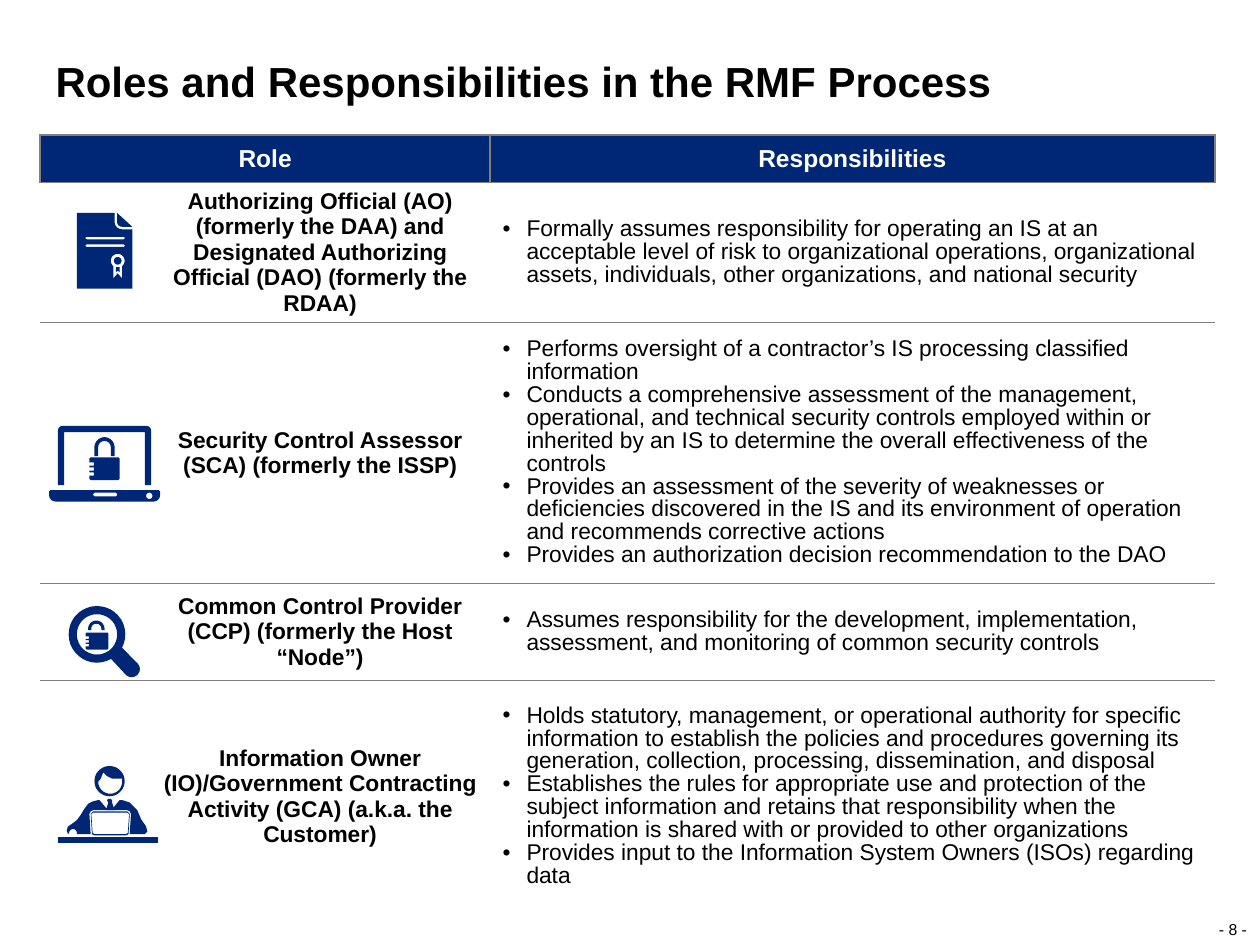
"""Build the slide on roles and responsibilities in the RMF process."""
from dataclasses import dataclass
from math import cos, radians, sin
from typing import NamedTuple

from lxml.etree import SubElement
from pptx import Presentation
from pptx.dml.color import RGBColor
from pptx.enum.text import MSO_ANCHOR, PP_ALIGN
from pptx.oxml import parse_xml
from pptx.oxml.ns import nsdecls, qn
from pptx.util import Cm, Pt

COLORS = {"navy": "002776", "white": "FFFFFF", "black": "000000", "rule": "808080"}
FONT = "Arial"
PLAIN_TABLE_STYLE = "{2D5ABB26-0587-4C30-8999-92F81FD0307C}"
ICON_UNIT = Cm(0.0254)
PRECISION = 10
Outline = list[tuple[float, float]]


@dataclass(frozen=True)
class TextStyle:
    size: float
    color: str = "black"
    bold: bool = False
    align: PP_ALIGN = PP_ALIGN.LEFT
    spacing: float = 1.0
    bullet: bool = False


class Role(NamedTuple):
    title: str
    duties: list[str]
    height: float
    filled: bool


class Icon(NamedTuple):
    pieces: list[list[Outline]]


class Label(NamedTuple):
    text: str
    box: tuple[float, float, float, float]
    style: TextStyle
    wrap: bool


HEADER = TextStyle(14, "white", True, PP_ALIGN.CENTER)
ROLE_NAME = TextStyle(13, bold=True, align=PP_ALIGN.CENTER)
DUTY = TextStyle(13, spacing=0.9, bullet=True)
LABELS = [
    Label("- 8 -", (24.46, 18.52, 0.79, 0.41), TextStyle(9, align=PP_ALIGN.CENTER, spacing=1.06), False),
    Label("Roles and Responsibilities in the RMF Process", (1.12, 1.24, 23.19, 0.91),
          TextStyle(24, bold=True, spacing=0.9), True),
]
COLUMN_WIDTHS = [2.21, 6.86, 14.61]
HEADER_HEIGHT = 0.96
ROLES = [
    Role("Authorizing Official (AO) (formerly the DAA) and Designated Authorizing Official (DAO) (formerly the RDAA)",
         ["Formally assumes responsibility for operating an IS at an acceptable level of risk to organizational "
          "operations, organizational assets, individuals, other organizations, and national security"], 2.82, True),
    Role("Security Control Assessor (SCA) (formerly the ISSP)",
         ["Performs oversight of a contractor’s IS processing classified information",
          "Conducts a comprehensive assessment of the management, operational, and technical security controls "
          "employed within or inherited by an IS to determine the overall effectiveness of the controls",
          "Provides an assessment of the severity of weaknesses or deficiencies discovered in the IS and its "
          "environment of operation and recommends corrective actions",
          "Provides an authorization decision recommendation to the DAO"], 5.26, True),
    Role("Common Control Provider (CCP) (formerly the Host “Node”)",
         ["Assumes responsibility for the development, implementation, assessment, and monitoring of common "
          "security controls"], 1.96, False),
    Role("Information Owner (IO)/Government Contracting Activity (GCA) (a.k.a. the Customer)",
         ["Holds statutory, management, or operational authority for specific information to establish the policies "
          "and procedures governing its generation, collection, processing, dissemination, and disposal",
          "Establishes the rules for appropriate use and protection of the subject information and retains that "
          "responsibility when the information is shared with or provided to other organizations",
          "Provides input to the Information System Owners (ISOs) regarding data"], 4.67, False),
]


def arc(x: float, y: float, radius: float, start: float = 0, end: float = 360) -> Outline:
    steps = max(4, round(abs(end - start) / 10))
    angles = [radians(start + (end - start) * step / steps) for step in range(steps + 1)]
    return [(x + radius * cos(angle), y + radius * sin(angle)) for angle in angles]


def pill(left: float, top: float, right: float, bottom: float) -> Outline:
    radius, middle = (bottom - top) / 2, (top + bottom) / 2
    return arc(right - radius, middle, radius, -90, 90) + arc(left + radius, middle, radius, 90, 270)


def lock_body(left: float, top: float, scale: float) -> Outline:
    right, bottom = left + 24 * scale, top + 18 * scale
    outline = [(left, bottom - scale), (left + scale, bottom), (right - scale, bottom), (right, bottom - scale),
               (right, top + scale), (right - scale, top), (left + scale, top), (left, top + scale)]
    for offset in (4, 8, 12):
        upper, lower, inner = top + offset * scale, top + (offset + 2.6) * scale, left + 3.5 * scale
        outline += [(left, upper), (inner, upper), (inner, lower), (left, lower)]
    return outline


def shackle(x: float, y: float, outer: float, inner: float, bottom: float) -> Outline:
    return ([(x - outer, bottom)] + arc(x, y, outer, 180, 360) + [(x + outer, bottom), (x + inner, bottom)]
            + arc(x, y, inner, 360, 180) + [(x - inner, bottom)])


CERTIFICATE = Icon([[
    [(61, 169), (91, 169)] + arc(97, 176, 6, 180, 90) + [(105, 182), (105, 229), (61, 229)],
    [(93, 169), (105, 180)] + arc(97, 176, 4, 90, 180),
    pill(68, 188, 99, 190), pill(68, 194, 99, 196),
    [(97, 211), (97, 221), (93.5, 217), (90, 221), (90, 211)] + arc(93.5, 207, 5.5, 135, 405),
    arc(93.5, 207, 3),
    [(92, 212), (92, 216), (93.5, 215), (95, 216), (95, 212)],
]])
LAPTOP = Icon([
    [[(51, 385), (51, 343), (115, 343), (115, 385), (120, 385)] + arc(116, 342, 4, 0, -90)
     + arc(50, 342, 4, -90, -180) + [(46, 385)]],
    [[(40, 389), (126, 389), (127, 390)] + arc(122, 393, 5, 0, 90) + arc(44, 393, 5, 90, 180) + [(39, 390)],
     pill(74, 391, 93, 394), arc(118.5, 393.5, 2.5)],
    [lock_body(71, 363, 1), shackle(83, 355, 8, 5, 362)],
])
MAGNIFIER = Icon([
    [arc(77, 503.5, 22.5, 60, 388) + arc(104.5, 531, 6.5, -45, 135), arc(77, 503.5, 16)],
    [lock_body(68, 502, 0.75)],
    [shackle(76.5, 499, 6.5, 4, 500)],
])
PERSON = Icon([
    [[(46, 664), (125, 664), (125, 669), (46, 669)]],
    [[(61, 662)] + arc(58, 661, 3, 0, -180)
     + [(54, 662), (53, 659), (54, 656), (57, 654), (61, 651), (64, 647), (67, 642), (70, 638), (74, 636),
        (78, 635), (79, 635), (84, 641), (87, 643), (90, 641), (95, 635), (97, 635), (103, 637), (109, 643),
        (112, 650), (116, 656), (117, 660), (115, 662), (103, 662), (104, 646), (103, 644), (101, 643),
        (74, 643), (72, 644), (71, 646), (72, 662)]],
    [[(75, 663), (73, 662), (72, 646), (74, 644), (101, 644), (103, 646), (102, 662), (100, 663)],
     [(75, 662), (73.5, 661), (72.5, 646), (74, 645), (101, 645), (102.5, 646), (101.5, 661), (100, 662)]],
    [[(84, 643), (91, 643), (89, 637), (89, 635), (88, 634), (86, 634), (85, 635), (86, 637)]],
    [arc(87, 620, 12),
     arc(87.5, 620.5, 9.5, 0, 180) + [(80, 618), (82, 613), (85, 616), (89, 618), (94, 618), (97, 618)]],
])


def write_paragraphs(text_frame, texts: list[str], style: TextStyle) -> None:
    for index, text in enumerate(texts):
        paragraph = text_frame.paragraphs[0] if index == 0 else text_frame.add_paragraph()
        if style.bullet:
            properties = paragraph._p.get_or_add_pPr()
            properties.set("marL", str(Cm(0.48)))
            properties.set("indent", str(-Cm(0.48)))
            SubElement(properties, qn("a:buFont")).set("typeface", FONT)
            SubElement(properties, qn("a:buChar")).set("char", "•")
        paragraph.alignment, paragraph.line_spacing = style.align, style.spacing
        run = paragraph.add_run()
        run.text = text
        run.font.name, run.font.size, run.font.bold = FONT, Pt(style.size), style.bold
        run.font.color.rgb = RGBColor.from_string(COLORS[style.color])


def format_cell(cell, fill: str | None, sides: str) -> None:
    cell.vertical_anchor = MSO_ANCHOR.MIDDLE
    cell.margin_top = cell.margin_bottom = 0
    if fill:
        cell.fill.solid()
        cell.fill.fore_color.rgb = RGBColor.from_string(COLORS[fill])
    else:
        cell.fill.background()
    for index, side in enumerate(sides):
        border = parse_xml(f'<a:ln{side} {nsdecls("a")} w="{Pt(1)}"><a:solidFill>'
                           f'<a:srgbClr val="{COLORS["rule"]}"/></a:solidFill></a:ln{side}>')
        cell._tc.get_or_add_tcPr().insert(index, border)


def draw_label(slide, label: Label) -> None:
    text_frame = slide.shapes.add_textbox(*map(Cm, label.box)).text_frame
    text_frame.margin_left = text_frame.margin_right = text_frame.margin_top = text_frame.margin_bottom = 0
    text_frame.word_wrap, text_frame.vertical_anchor = label.wrap, MSO_ANCHOR.BOTTOM
    write_paragraphs(text_frame, [label.text], label.style)


def draw_table(slide) -> None:
    heights = [HEADER_HEIGHT] + [role.height for role in ROLES]
    table = slide.shapes.add_table(len(heights), len(COLUMN_WIDTHS), Cm(0.81), Cm(2.72),
                                   Cm(sum(COLUMN_WIDTHS)), Cm(sum(heights))).table
    table.horz_banding = False
    table._tbl.tblPr.find(qn("a:tableStyleId")).text = PLAIN_TABLE_STYLE
    for column, width in zip(table.columns, COLUMN_WIDTHS):
        column.width = Cm(width)
    for row, height in zip(table.rows, heights):
        row.height = Cm(height)
    for cell in table.rows[0].cells:
        format_cell(cell, "navy", "LRTB")
    table.cell(0, 0).merge(table.cell(0, 1))
    write_paragraphs(table.cell(0, 0).text_frame, ["Role"], HEADER)
    write_paragraphs(table.cell(0, 2).text_frame, ["Responsibilities"], HEADER)
    for index, role in enumerate(ROLES, 1):
        for cell in table.rows[index].cells:
            format_cell(cell, "white" if role.filled else None, "TB" if index < len(ROLES) else "T")
        write_paragraphs(table.cell(index, 1).text_frame, [role.title], ROLE_NAME)
        write_paragraphs(table.cell(index, 2).text_frame, role.duties, DUTY)


def draw_icon(slide, icon: Icon) -> None:
    shapes = slide.shapes if len(icon.pieces) == 1 else slide.shapes.add_group_shape().shapes
    for piece in icon.pieces:
        outlines = [[(x * PRECISION, y * PRECISION) for x, y in outline] for outline in piece]
        builder = shapes.build_freeform(*outlines[0][0], scale=ICON_UNIT / PRECISION)
        builder.add_line_segments(outlines[0][1:])
        for outline in outlines[1:]:
            builder.move_to(*outline[0])
            builder.add_line_segments(outline[1:])
        shape = builder.convert_to_shape()
        shape.shadow.inherit = False
        shape.fill.solid()
        shape.fill.fore_color.rgb = RGBColor.from_string(COLORS["navy"])
        shape.line.fill.background()


def main() -> None:
    presentation = Presentation()
    presentation.slide_width, presentation.slide_height = Cm(25.4), Cm(19.05)
    slide = presentation.slides.add_slide(presentation.slide_layouts[6])
    for label in LABELS:
        draw_label(slide, label)
    draw_table(slide)
    for icon in (CERTIFICATE, LAPTOP, MAGNIFIER, PERSON):
        draw_icon(slide, icon)
    presentation.save("out.pptx")


if __name__ == "__main__":
    main()
